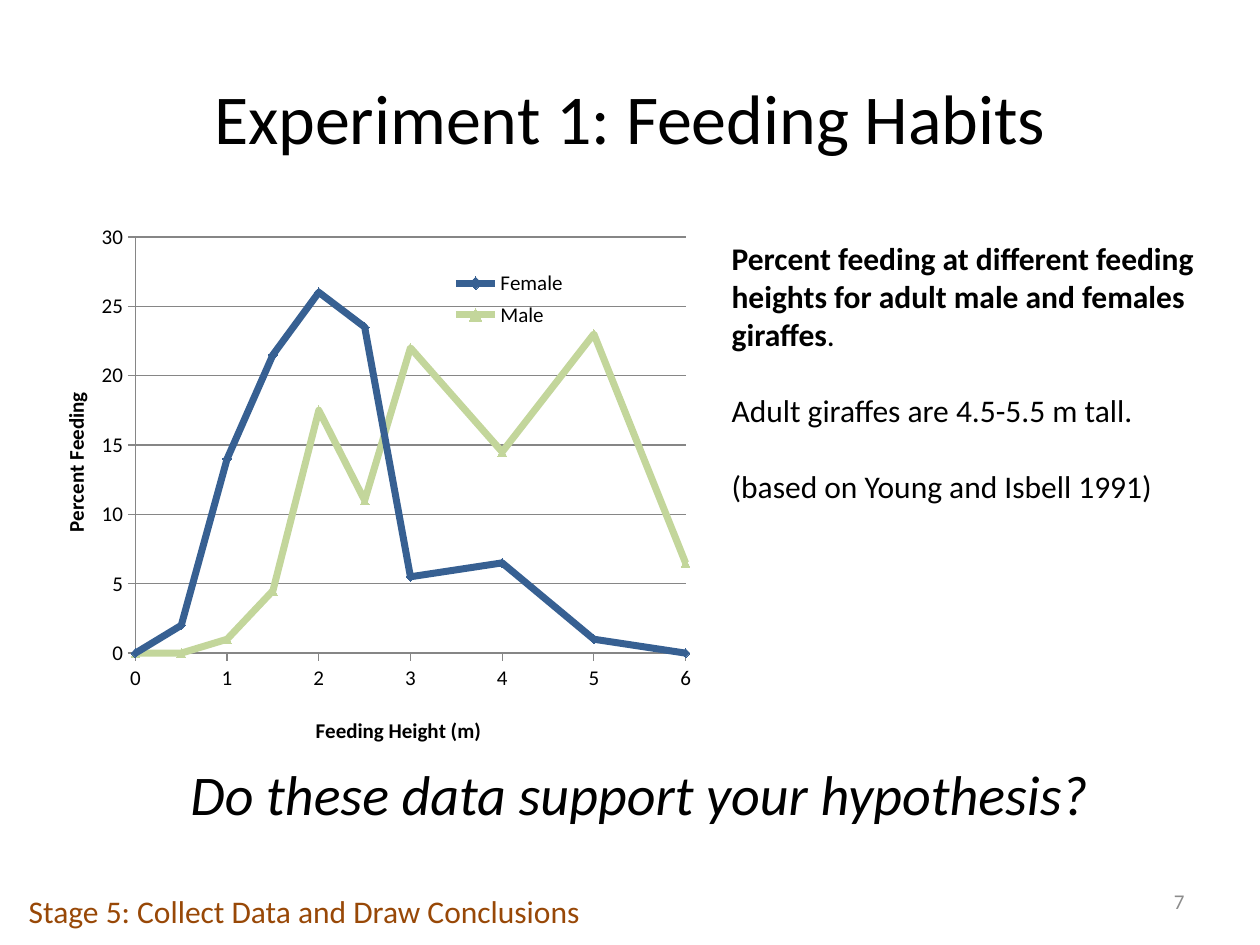
from lxml.etree import SubElement
from pptx import Presentation
from pptx.chart.data import XyChartData
from pptx.dml.color import RGBColor
from pptx.enum.chart import XL_CHART_TYPE as ChartType
from pptx.enum.chart import XL_LEGEND_POSITION as LegendPos
from pptx.enum.chart import XL_MARKER_STYLE as Marker
from pptx.enum.chart import XL_TICK_MARK as Tick
from pptx.enum.text import MSO_ANCHOR as Anchor
from pptx.enum.text import PP_ALIGN as Align
from pptx.oxml.ns import qn
from pptx.util import Cm, Pt

THEME = {
    "font": "Calibri",
    "black": RGBColor(0x00, 0x00, 0x00),
    "grey": RGBColor(0x8C, 0x8C, 0x8C),
    "axis": RGBColor(0x86, 0x86, 0x86),
    "brown": RGBColor(0x98, 0x48, 0x07),
    "female": RGBColor(0x37, 0x60, 0x92),
    "male": RGBColor(0xC3, 0xD6, 0x9B),
    "title": Pt(40),
    "question": Pt(32),
    "body": Pt(18),
    "small": Pt(12),
}


def add_text(s, box, paragraphs, size, color="black", align=Align.LEFT,
             anchor=Anchor.TOP, gap=0):
    """Each paragraph is a list of (text, font format) runs."""
    tf = s.shapes.add_textbox(*map(Cm, box)).text_frame
    tf.word_wrap = True
    tf.vertical_anchor = anchor
    for i, runs in enumerate(paragraphs):
        p = tf.add_paragraph() if i else tf.paragraphs[0]
        p.alignment = align
        p.space_before = Pt(gap if i else 0)
        for text, extra in runs:
            r = p.add_run()
            r.text = text
            r.font.color.rgb = THEME[color]
            font = {"name": THEME["font"], "size": THEME[size], **extra}
            for name, value in font.items():
                setattr(r.font, name, value)


def set_layout(parent, index, **values):
    """Place a chart part by fractions of the chart's size."""
    for old in parent.findall(qn("c:layout")):
        parent.remove(old)
    layout = SubElement(parent, qn("c:layout"))
    parent.insert(index, layout)
    manual = SubElement(layout, qn("c:manualLayout"))
    for name, value in values.items():
        SubElement(manual, qn(f"c:{name}")).set("val", str(value))


prs = Presentation()
prs.slide_width, prs.slide_height = Cm(25.4), Cm(19.05)
s = prs.slides.add_slide(prs.slide_layouts[6])

# Feeding chart
heights = [0, 0.5, 1, 1.5, 2, 2.5, 3, 4, 5, 6]
feeding = {
    "Female": [0, 2, 14, 21.5, 26, 23.5, 5.5, 6.5, 1, 0],
    "Male": [0, 0, 1, 4.5, 17.5, 11, 22, 14.5, 23, 6.5],
}
data = XyChartData()
for name, percents in feeding.items():
    series = data.add_series(name)
    for height, percent in zip(heights, percents):
        series.add_data_point(height, percent)

chart = s.shapes.add_chart(ChartType.XY_SCATTER_LINES, Cm(0.74), Cm(4.34),
                           Cm(14.22), Cm(10.9), data).chart
chart.has_title = False
chart.font.name = THEME["font"]
chart.font.size = THEME["small"]
chart.font.color.rgb = THEME["black"]
plot = chart.plots[0]
plot.vary_by_categories = False

markers = [Marker.DIAMOND, Marker.TRIANGLE]
for series, marker in zip(plot.series, markers):
    color = THEME[series.name.lower()]
    series.smooth = False
    series.format.line.width = Pt(4)
    series.format.line.color.rgb = color
    series.marker.style = marker
    series.marker.size = 5
    series.marker.format.fill.solid()
    series.marker.format.fill.fore_color.rgb = color
    series.marker.format.line.color.rgb = color

axes = [
    (chart.category_axis, "Feeding Height (m)", 6, 1, False, (0.39, 0.92)),
    (chart.value_axis, "Percent Feeding", 30, 5, True, (0.03, 0.32)),
]
for axis, title, maximum, step, grid, (x, y) in axes:
    settings = {
        "minimum_scale": 0, "maximum_scale": maximum, "major_unit": step,
        "has_major_gridlines": grid, "major_tick_mark": Tick.OUTSIDE,
        "minor_tick_mark": Tick.NONE,
    }
    for name, value in settings.items():
        setattr(axis, name, value)
    axis.tick_labels.number_format = "General"
    axis.tick_labels.number_format_is_linked = False
    axis.format.line.color.rgb = THEME["axis"]
    if grid:
        axis.major_gridlines.format.line.color.rgb = THEME["axis"]
    tf = axis.axis_title.text_frame
    tf.text = title
    font = tf.paragraphs[0].runs[0].font
    font.name, font.size, font.bold = THEME["font"], THEME["small"], True
    font.color.rgb = THEME["black"]
    set_layout(axis.axis_title._element, 1, xMode="edge", yMode="edge", x=x, y=y)

chart.has_legend = True
legend = chart.legend
legend.position = LegendPos.RIGHT
legend.include_in_layout = False
legend.font.name = THEME["font"]
legend.font.size = THEME["small"]
set_layout(legend._element, 1, xMode="edge", yMode="edge",
           x=0.56, y=0.09, w=0.22, h=0.13)
plot_area = chart._chartSpace.chart.plotArea
set_layout(plot_area, 0, layoutTarget="inner", xMode="edge", yMode="edge",
           x=0.14, y=0.04, w=0.78, h=0.77)

# Texts
add_text(s, (1.27, 0.76, 22.86, 3.18), [[("Experiment 1: Feeding Habits", {})]],
         "title", align=Align.CENTER, anchor=Anchor.MIDDLE)
add_text(s, (14.5, 4.7, 10.44, 7.19), [
    [("Percent feeding at different feeding heights for adult male and "
      "females giraffes", {"bold": True}), (".", {})],
    [("Adult giraffes are 4.5-5.5 m tall.", {})],
    [("(based on Young and Isbell 1991)", {})],
], "body", gap=22)
add_text(s, (2.06, 15.19, 21.67, 1.63),
         [[("Do these data support your hypothesis?", {"italic": True})]],
         "question", align=Align.CENTER)
add_text(s, (0.33, 17.86, 14.63, 1.02),
         [[("Stage 5: Collect Data and Draw Conclusions", {})]],
         "body", color="brown")
add_text(s, (18.21, 17.65, 5.92, 1.02), [[("7", {})]], "small", color="grey",
         align=Align.RIGHT, anchor=Anchor.MIDDLE)

prs.save("out.pptx")
